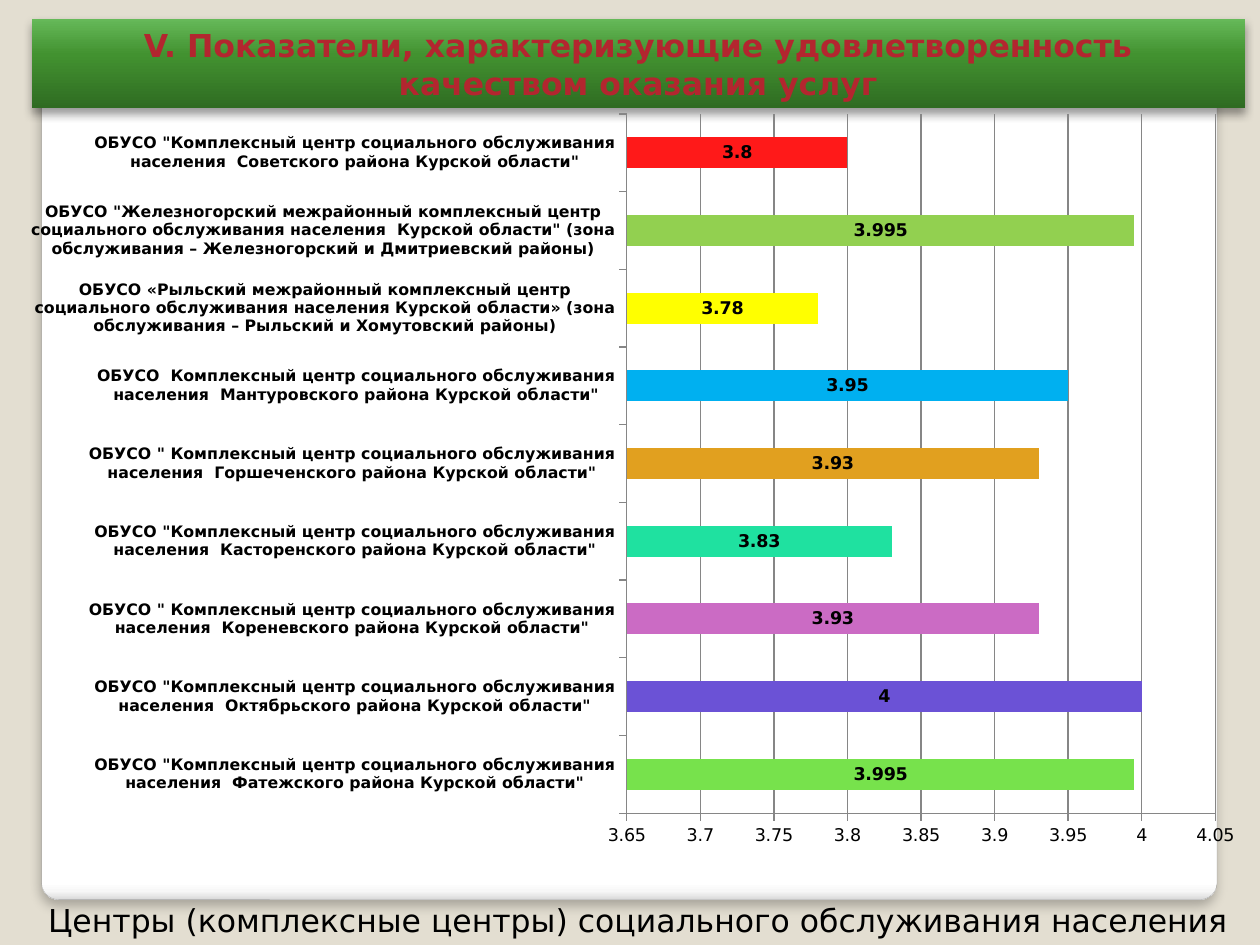
from lxml import etree
from pptx import Presentation
from pptx.chart.data import CategoryChartData
from pptx.dml.color import RGBColor
from pptx.enum import chart as ch, shapes, text
from pptx.oxml import parse_xml
from pptx.oxml.ns import nsdecls, qn
from pptx.util import Inches, Pt

# Content
FONT = "DejaVu Sans"
TITLE = "V. Показатели, характеризующие удовлетворенность качеством оказания услуг"
CAPTION = "Центры (комплексные центры) социального обслуживания населения"
CENTER = "Комплексный центр социального обслуживания населения "
REGION = 'района Курской области"'
INTER = "межрайонный комплексный центр социального обслуживания населения"
CENTERS = [  # name, score, bar colour; from the bottom up
    (f'ОБУСО "{CENTER} Фатежского {REGION}', 3.995, "77E24C"),
    (f'ОБУСО "{CENTER} Октябрьского {REGION}', 4, "6B52D6"),
    (f'ОБУСО " {CENTER} Кореневского {REGION}', 3.93, "CB6BC4"),
    (f'ОБУСО "{CENTER} Касторенского {REGION}', 3.83, "1FE1A0"),
    (f'ОБУСО " {CENTER} Горшеченского {REGION}', 3.93, "E1A01F"),
    (f'ОБУСО  {CENTER} Мантуровского {REGION}', 3.95, "00B0F0"),
    (f"ОБУСО «Рыльский {INTER} Курской области» "
     "(зона обслуживания – Рыльский и Хомутовский районы)", 3.78, "FFFF00"),
    (f'ОБУСО "Железногорский {INTER}  Курской области" '
     "(зона обслуживания – Железногорский и Дмитриевский районы)", 3.995, "92D050"),
    (f'ОБУСО "{CENTER} Советского {REGION}', 3.8, "FF1919"),
]
PANEL_STOPS = [(0, "FFFFFF"), (98, "FFFFFF"), (99, "F7F7F7"), (100, "DADADA")]
BANNER_STOPS = [(0, "2F6B22"), (60, "429230"), (100, "66B959")]
PLOT_LAYOUT = {"x": 0.5, "y": 0.02, "w": 0.48, "h": 0.9}
PLOT_LAYOUT.update(x=0.501, y=0.017, w=0.482, h=0.898)
PLOT_LAYOUT = {side: round(part, 3) for side, part in PLOT_LAYOUT.items()}
AXIS = {"minimum_scale": 3.65, "maximum_scale": 4.05, "major_unit": 0.05,
        "has_major_gridlines": True, "major_tick_mark": ch.XL_TICK_MARK.OUTSIDE}


def rgb(value):
    return RGBColor.from_string(value)


def inches(*values):
    return [Inches(value) for value in values]


def place(shape, *box):
    for side, value in zip(("left", "top", "width", "height"), inches(*box)):
        setattr(shape, side, value)


def style_font(font, size, bold=False, color="000000"):
    for key, value in {"name": FONT, "size": Pt(size), "bold": bold}.items():
        setattr(font, key, value)
    font.color.rgb = rgb(color)


def write(shape, words, **font):
    frame = shape.text_frame
    frame.word_wrap = True
    frame.auto_size = text.MSO_AUTO_SIZE.NONE
    frame.vertical_anchor = text.MSO_ANCHOR.MIDDLE
    paragraph = frame.paragraphs[0]
    paragraph.alignment = text.PP_ALIGN.CENTER
    paragraph.line_spacing = 1.0
    run = paragraph.add_run()
    run.text = words
    style_font(run.font, **font)


def decorate(shape, stops, angle, line, blur, distance, alpha):
    """Gradient fill, outline and a shadow falling downwards."""
    gs = "".join(f'<a:gs pos="{pos * 1000}"><a:srgbClr val="{color}"/></a:gs>'
                 for pos, color in stops)
    parts = [
        f'<a:gradFill {nsdecls("a")} rotWithShape="1"><a:gsLst>{gs}</a:gsLst>'
        f'<a:lin ang="{angle * 60000}" scaled="0"/></a:gradFill>',
        f'<a:ln {nsdecls("a")} w="2000">{line}</a:ln>',
        f'<a:effectLst {nsdecls("a")}><a:outerShdw blurRad="{Pt(blur)}" '
        f'dist="{Pt(distance)}" dir="5400000" rotWithShape="0"><a:srgbClr val="000000">'
        f'<a:alpha val="{alpha * 1000}"/></a:srgbClr></a:outerShdw></a:effectLst>',
    ]
    for part in parts:
        shape._element.spPr.append(parse_xml(part))


prs = Presentation()
prs.slide_width, prs.slide_height = inches(10, 7.5)
slide = prs.slides.add_slide(prs.slide_layouts[5])
slide.background.fill.solid()
slide.background.fill.fore_color.rgb = rgb("E3DED1")

# White panel, behind everything else
panel = slide.shapes.add_shape(shapes.MSO_SHAPE.ROUNDED_RECTANGLE,
                               *inches(0.33, 0.36, 9.33, 6.78))
panel.adjustments[0] = 0.02
decorate(panel, PANEL_STOPS, 90, '<a:solidFill><a:srgbClr val="A4A4A4"/></a:solidFill>', 6, 4, 25)
slide.shapes._spTree.insert(2, panel._element)

# Caption and title banner
caption = slide.shapes.add_textbox(*inches(0.25, 7.1, 9.63, 0.4))
write(caption, CAPTION, size=18)
banner = slide.shapes.title
place(banner, 0.25, 0.15, 9.63, 0.71)
decorate(banner, BANNER_STOPS, 270, "<a:noFill/>", 5.2, 3, 40)
write(banner, TITLE, size=18, bold=True, color="B3262F")

# Chart of scores
names, scores, colors = zip(*CENTERS)
data = CategoryChartData()
data.categories = names
data.add_series("Series 1", scores)
chart = slide.shapes.add_chart(ch.XL_CHART_TYPE.BAR_STACKED,
                               *inches(0.12, 0.8, 9.69, 6.18), data).chart
chart.has_legend = chart.has_title = False
style_font(chart.font, 10)

plot = chart.plots[0]
plot.gap_width, plot.overlap, plot.vary_by_categories = 150, 100, False
series = plot.series[0]
for index, color in enumerate(colors):
    fill = series.points[index].format.fill
    fill.solid()
    fill.fore_color.rgb = rgb(color)
labels = series.data_labels
labels.show_value = True
labels.position = ch.XL_LABEL_POSITION.CENTER
style_font(labels.font, 10, bold=True)

# Axes
score_axis, name_axis = chart.value_axis, chart.category_axis
for key, value in AXIS.items():
    setattr(score_axis, key, value)
score_axis.tick_labels.number_format = "General"
score_axis.tick_labels.number_format_is_linked = False
name_axis.major_tick_mark = ch.XL_TICK_MARK.OUTSIDE
style_font(score_axis.tick_labels.font, 10)
style_font(name_axis.tick_labels.font, 9, bold=True)
for line in (score_axis.format.line, name_axis.format.line, score_axis.major_gridlines.format.line):
    line.color.rgb = rgb("868686")
    line.width = Pt(0.75)

# Fixed plot area
plot_area = chart._chartSpace.chart.plotArea
for old in plot_area.findall(qn("c:layout")):
    plot_area.remove(old)
layout = etree.Element(qn("c:layout"))
manual = etree.SubElement(layout, qn("c:manualLayout"))
settings = {"layoutTarget": "inner", "xMode": "edge", "yMode": "edge", **PLOT_LAYOUT}
for tag, value in settings.items():
    etree.SubElement(manual, qn(f"c:{tag}")).set("val", str(value))
plot_area.insert(0, layout)

prs.save("out.pptx")
